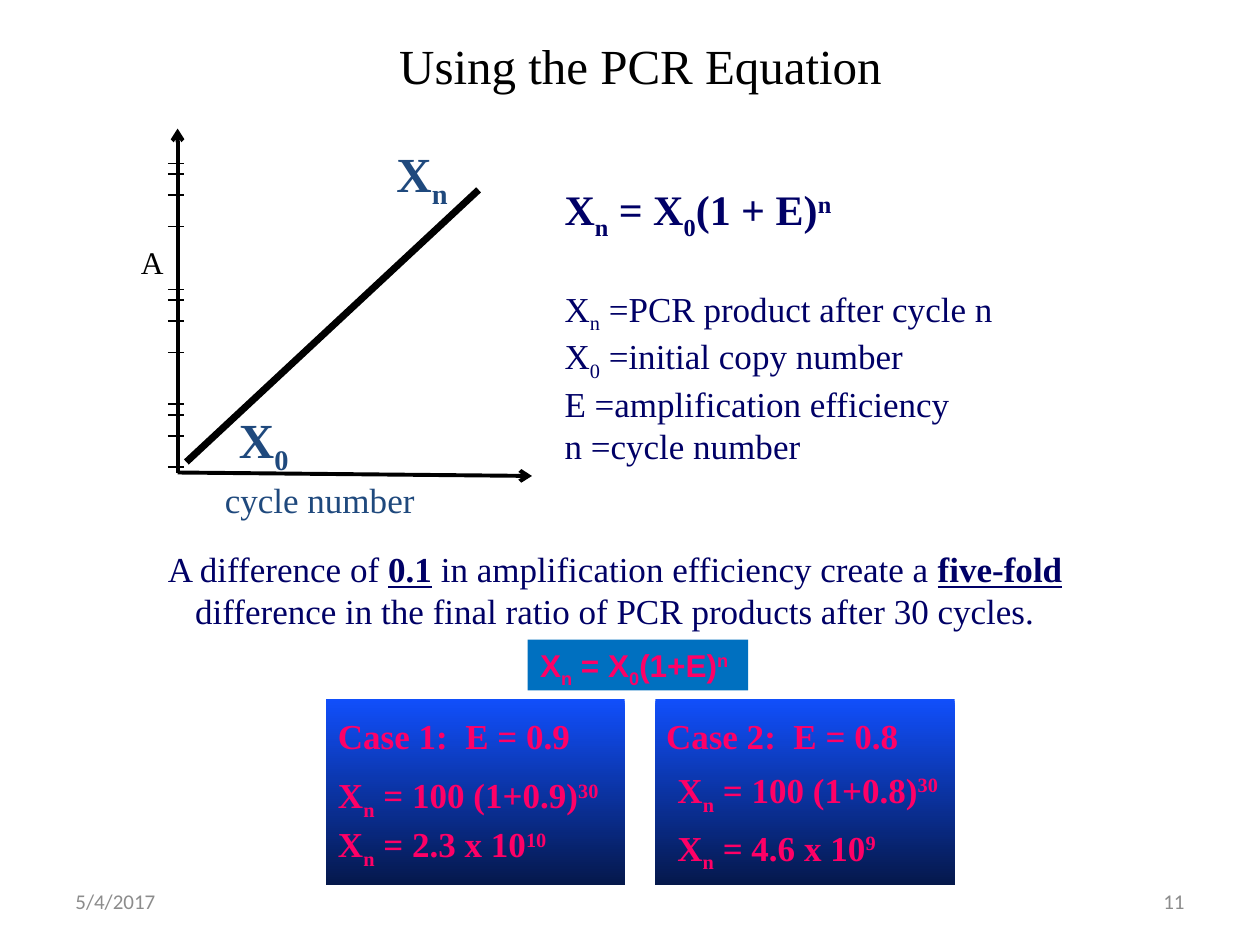
from dataclasses import dataclass
from itertools import product

from lxml.etree import SubElement
from pptx import Presentation
from pptx.dml.color import RGBColor
from pptx.enum.shapes import MSO_CONNECTOR, MSO_SHAPE
from pptx.enum.text import MSO_ANCHOR, MSO_AUTO_SIZE, PP_ALIGN
from pptx.oxml.ns import qn
from pptx.util import Pt

SERIF = "Times New Roman"
BLACK, NAVY, BLUE, PINK, GREY = "000000", "000066", "1F497D", "FF0066", "8C8C8C"
BASELINE = {"sub": "-25000", "sup": "30000"}


@dataclass
class Label:
    """A text box; each paragraph is a list of (text, style) runs."""
    box: tuple
    paras: list
    size: float
    color: str
    bold: bool = False
    font: str = SERIF
    align: PP_ALIGN = PP_ALIGN.LEFT
    anchor: MSO_ANCHOR = MSO_ANCHOR.TOP
    wrap: bool = True
    grow: bool = True
    fill: str = ""
    tab: float = 0


@dataclass
class Line:
    start: tuple
    end: tuple
    width: float
    arrow: bool = False


def rgb(color: str) -> RGBColor:
    return RGBColor.from_string(color)


def var(index: str, rest: str = "", power: str = "") -> list:
    """Runs for X with an index, then plain text and a power."""
    runs = [("X", ""), (index, "sub"), (rest, ""), (power, "sup")]
    return [run for run in runs if run[0]]


def equation(rest: str) -> list:
    return var("n", " = X") + [("0", "sub"), (rest, ""), ("n", "sup")]


def fill_text(sp, label: Label) -> None:
    tf = sp.text_frame
    fit = MSO_AUTO_SIZE.SHAPE_TO_FIT_TEXT if label.grow else MSO_AUTO_SIZE.NONE
    frame = {"word_wrap": label.wrap, "auto_size": fit,
             "vertical_anchor": label.anchor}
    for name, value in frame.items():
        setattr(tf, name, value)
    for i, runs in enumerate(label.paras):
        p = tf.add_paragraph() if i else tf.paragraphs[0]
        p.alignment = label.align
        if label.tab:
            tabs = SubElement(p._p.get_or_add_pPr(), qn("a:tabLst"))
            SubElement(tabs, qn("a:tab"), pos=str(Pt(label.tab)), algn="l")
        for text, style in runs:
            r = p.add_run()
            r.text = text
            formats = {"name": label.font, "size": Pt(label.size),
                       "bold": label.bold or style == "em",
                       "underline": style == "em"}
            for name, value in formats.items():
                setattr(r.font, name, value)
            r.font.color.rgb = rgb(label.color)
            if style in BASELINE:
                r.font._element.set("baseline", BASELINE[style])


def add_label(s, label: Label) -> None:
    box = [Pt(v) for v in label.box]
    if label.fill:
        sp = s.shapes.add_shape(MSO_SHAPE.RECTANGLE, *box)
        sp.shadow.inherit = False
        sp.fill.solid()
        sp.fill.fore_color.rgb = rgb(label.fill)
        sp.line.fill.background()
    else:
        sp = s.shapes.add_textbox(*box)
    fill_text(sp, label)


def add_line(s, line: Line) -> None:
    ends = [Pt(v) for v in line.start + line.end]
    c = s.shapes.add_connector(MSO_CONNECTOR.STRAIGHT, *ends)
    c.line.width = Pt(line.width)
    c.line.color.rgb = rgb(BLACK)
    if line.arrow:
        SubElement(c.line._ln, qn("a:tailEnd"), type="arrow")
    SubElement(c._element.spPr, qn("a:effectLst"))


def add_panel(s, left: float) -> None:
    sp = s.shapes.add_shape(MSO_SHAPE.RECTANGLE, Pt(left), Pt(399.5),
                            Pt(171), Pt(106.5))
    sp.shadow.inherit = False
    sp.line.fill.background()
    sp.fill.gradient()
    sp.fill.gradient_angle = 270
    for stop, color in zip(sp.fill.gradient_stops, ("114FFB", "05184B")):
        stop.color.rgb = rgb(color)


def add_title(s) -> None:
    title = s.shapes.title
    box = {"left": 196.5, "top": 0, "width": 339, "height": 57.5}
    for name, value in box.items():
        setattr(title, name, Pt(value))
    fill_text(title, Label((), [[("Using the PCR Equation", "")]], 28, BLACK,
                           align=PP_ALIGN.CENTER, anchor=MSO_ANCHOR.BOTTOM,
                           grow=False))


FOOTER = {"size": 12, "color": GREY, "font": "Calibri",
          "anchor": MSO_ANCHOR.MIDDLE, "grow": False}
POINT = {"size": 28, "color": BLUE, "bold": True}
CASE = {"size": 20, "color": PINK, "bold": True}

# Log-scale axis: three decades with the same four tick offsets
DECADES, TICKS = (267, 201.5, 129.5), (0, 18, 30, 36)
PLOT = [Line((106.5, 264), (273.5, 108.5), 4)]
PLOT += [Line((96, base - up), (105, base - up), 1)
         for base, up in product(DECADES, TICKS)]
PLOT += [Line((101.5, 270), (101.5, 73.5), 2.25, arrow=True),
         Line((101.5, 270), (304, 272), 2.25, arrow=True)]

LABELS = [
    # Footer
    Label((36, 500.5, 168, 28.5), [[("5/4/2017", "")]], **FOOTER),
    Label((516, 500.5, 168, 28.5), [[("11", "")]], align=PP_ALIGN.RIGHT, **FOOTER),
    # Equation and its terms
    Label((315.5, 101.5, 171, 36), [equation("(1 + E)")], 24, NAVY,
          bold=True, wrap=False),
    Label((315.5, 160.5, 276, 104),
          [var("n", " =PCR product after cycle n"),
           var("0", " =initial copy number"),
           [("E =amplification efficiency", "")],
           [("n =cycle number", "")]], 20, NAVY),
    # Plot labels
    Label((219.5, 78.5, 50.5, 41), [var("n")], **POINT),
    Label((129.5, 230.5, 44, 40), [var("0")], wrap=False, **POINT),
    Label((118, 270, 129.5, 31), [[("cycle number", "")]], 20, BLUE,
          align=PP_ALIGN.CENTER),
    Label((73.5, 135.5, 27.5, 29), [[("A", "")]], 18, BLACK, wrap=False),
    # Conclusion
    Label((78.5, 309.5, 546, 55.5),
          [[("A difference of ", ""), ("0.1", "em"),
            (" in amplification efficiency create a ", ""),
            ("five-fold ", "em"),
            ("difference in the final ratio of PCR products after 30 cycles.", "")]],
          20, NAVY, align=PP_ALIGN.CENTER),
    # Worked cases
    Label((301.5, 365.5, 126, 29), [equation("(1+E)")], 18, PINK, bold=True,
          font="Arial", wrap=False, fill="0070C0"),
    Label((186, 404.5, 343.5, 31),
          [[("Case 1:  E = 0.9\tCase 2:  E = 0.8", "")]], tab=187.5, **CASE),
    Label((186, 438.5, 167, 31), [var("n", " = 100 (1+0.9)", "30")],
          wrap=False, **CASE),
    Label((380, 435.5, 167, 31), [var("n", " = 100 (1+0.8)", "30")],
          wrap=False, **CASE),
    Label((186, 466.5, 137, 31), [var("n", " = 2.3 x 10", "10")],
          wrap=False, **CASE),
    Label((380, 468.5, 130.5, 31), [var("n", " = 4.6 x 10", "9")],
          wrap=False, **CASE),
]


def main() -> None:
    prs = Presentation()
    prs.slide_width, prs.slide_height = Pt(720), Pt(540)
    s = prs.slides.add_slide(prs.slide_layouts[5])
    add_title(s)
    for line in PLOT:
        add_line(s, line)
    for left in (186, 374.5):
        add_panel(s, left)
    for label in LABELS:
        add_label(s, label)
    prs.save("out.pptx")


if __name__ == "__main__":
    main()
